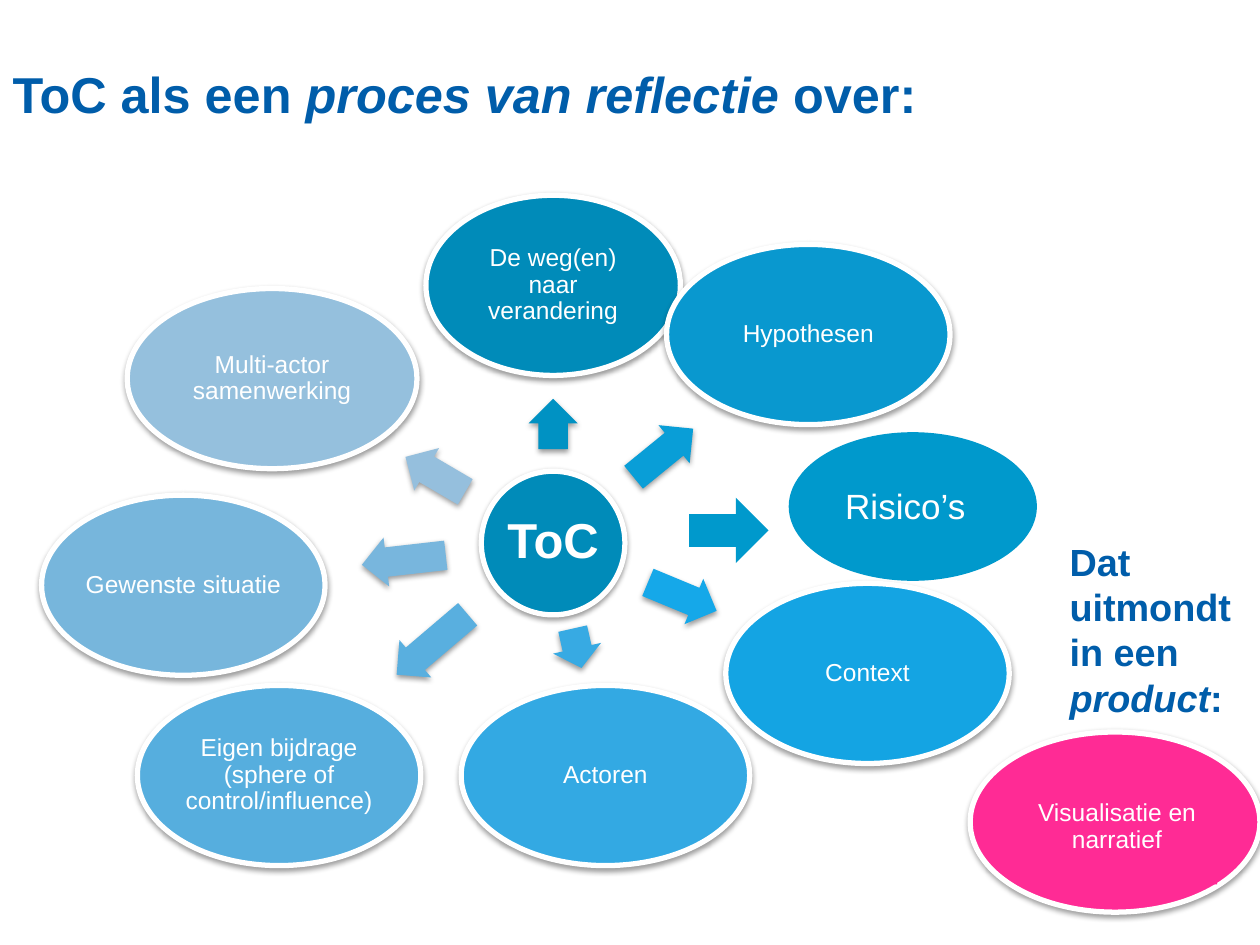
from lxml.etree import SubElement
from pptx import Presentation
from pptx.dml.color import RGBColor
from pptx.enum.shapes import MSO_SHAPE as Shape
from pptx.enum.text import MSO_ANCHOR as Anchor, MSO_AUTO_SIZE as AutoSize, PP_ALIGN as Align
from pptx.oxml.ns import qn
from pptx.util import Inches, Pt

# The slide is a grid of 100 columns by 75 rows of square cells.
COLUMNS, ROWS = 100, 75
CELL = Inches(0.1)
OVAL_ROWS = 14.3
ARROW_ROWS = 3.9
LABEL_INSET = 0.2
FONT = "Arial"
WHITE, NAVY, TEAL, BLUE, PINK = "FFFFFF", "005DAA", "008BB9", "0099CC", "FF2B95"

# Label, oval (column, row, columns wide, colour),
# arrow (column, row, columns long, rotation, colour)
TOPICS = [
    ("De weg(en) naar verandering", (33.8, 15.5, 20.2, TEAL), (41.9, 31.7, 4, 270, "0092C3")),
    ("Hypothesen", (52.9, 19.4, 22.5, "0998CF"), (49.6, 34, 6.1, 320.8, "099ED7")),
    ("Context", (57.6, 46.3, 22.5, "14A4E3"), (51.2, 45.4, 5.9, 22.5, "15A8E9")),
    ("Actoren", (36.6, 54.4, 22.9, "33A9E3"), (44.2, 49.5, 3.2, 77.4, "37AAE3")),
    ("Eigen bijdrage (sphere of control/influence)",
     (10.9, 54.4, 22.5, "56AEDE"), (30.6, 49.2, 7.4, 139.6, "59AFDF")),
    ("Gewenste situatie", (3.3, 39.3, 22.5, "77B6DC"), (28.7, 42.5, 6.7, 173.5, "78B6DD")),
    ("Multi-actor samenwerking", (10.1, 22.9, 23, "95C0DD"), (31.8, 35.7, 5.5, 210.3, "95BFDD")),
]


def color(hex_text):
    return RGBColor.from_string(hex_text)


def cells(*counts):
    return [round(count * CELL) for count in counts]


def add_soft_shadow(shape):
    effects = shape._element.spPr.find(qn("a:effectLst"))
    shadow = SubElement(effects, qn("a:outerShdw"), blurRad=str(Pt(3.1)), dist=str(Pt(1.6)),
                        dir="5400000", rotWithShape="0")
    black = SubElement(shadow, qn("a:srgbClr"), val="000000")
    SubElement(black, qn("a:alpha"), val="38000")


def add_figure(slide, kind, place, fill, outlined=False, shadowed=False):
    shape = slide.shapes.add_shape(kind, *cells(*place))
    shape.shadow.inherit = False
    shape.fill.solid()
    shape.fill.fore_color.rgb = color(fill)
    if outlined:
        shape.line.color.rgb = color(WHITE)
        shape.line.width = Pt(3)
    else:
        shape.line.fill.background()
    if shadowed:
        add_soft_shadow(shape)
    return shape


def add_oval(slide, place, fill):
    return add_figure(slide, Shape.OVAL, place, fill, outlined=True, shadowed=True)


def add_arrow(slide, left, top, length, rotation, fill):
    arrow = add_figure(slide, Shape.RIGHT_ARROW, (left, top, length, ARROW_ROWS), fill,
                       shadowed=True)
    arrow.adjustments[0] = 0.6
    arrow.rotation = rotation


def write_label(shape, text, size=14, bold=False, wrap=True):
    """Centre a white label in a shape."""
    frame = shape.text_frame
    frame.word_wrap = wrap
    frame.vertical_anchor = Anchor.MIDDLE
    frame.margin_left, frame.margin_top, frame.margin_right, frame.margin_bottom = cells(
        *[LABEL_INSET] * 4)
    paragraph = frame.paragraphs[0]
    paragraph.text = text
    paragraph.alignment = Align.CENTER
    paragraph.line_spacing = 0.9
    set_font(paragraph, size, WHITE, bold)


def set_font(paragraph, size, hex_text, bold=False):
    font = paragraph.font
    font.name, font.size, font.bold = FONT, Pt(size), bold
    font.color.rgb = color(hex_text)


def write_heading(shape, before, emphasis, after, size):
    """Write a bold heading whose middle part is in italics."""
    frame = shape.text_frame
    frame.word_wrap = True
    frame.auto_size = AutoSize.NONE
    frame.vertical_anchor = Anchor.BOTTOM
    paragraph = frame.paragraphs[0]
    paragraph.alignment = Align.LEFT
    for text in (before, emphasis, after):
        run = paragraph.add_run()
        run.text = text
        run.font.italic = text == emphasis
    set_font(paragraph, size, NAVY, bold=True)


def add_title(slide):
    title = slide.shapes.title
    title.left, title.top, title.width, title.height = cells(0, 2.8, 75, 7.5)
    write_heading(title, "ToC als een ", "proces van reflectie ", "over:", 28.8)


def add_reflection_wheel(slide):
    hub = add_oval(slide, (38.2, 37.4, 11.4, 11.4), TEAL)
    write_label(hub, "ToC", 28, bold=True, wrap=False)
    for label, (left, top, width, fill), arrow in TOPICS:
        add_arrow(slide, *arrow)
        oval = add_oval(slide, (left, top, width, OVAL_ROWS), fill)
        write_label(oval, label)


def add_risks(slide):
    add_figure(slide, Shape.OVAL, (62.6, 34.3, 19.7, 11.8), BLUE)
    box = slide.shapes.add_textbox(*cells(66.1, 38, 13.4, 4.4))
    box.text_frame.word_wrap = True
    paragraph = box.text_frame.paragraphs[0]
    paragraph.text = "Risico’s"
    set_font(paragraph, 20, WHITE)
    add_figure(slide, Shape.RIGHT_ARROW, (54.7, 39.5, 6.3, 5.2), BLUE)


def add_product(slide):
    add_oval(slide, (77, 58.1, 23, OVAL_ROWS), PINK)
    panel = add_figure(slide, Shape.RECTANGLE, (80.7, 61.1, 15.9, 9.1), PINK)
    write_label(panel, "Visualisatie en narratief")
    heading = slide.shapes.add_textbox(*cells(83.9, 44.7, 16.1, 12.9))
    write_heading(heading, "Dat uitmondt in een ", "product", ":", 21.6)


def main():
    presentation = Presentation()
    presentation.slide_width, presentation.slide_height = cells(COLUMNS, ROWS)
    slide = presentation.slides.add_slide(presentation.slide_layouts[5])
    add_title(slide)
    add_reflection_wheel(slide)
    add_risks(slide)
    add_product(slide)
    presentation.save("out.pptx")


if __name__ == "__main__":
    main()
